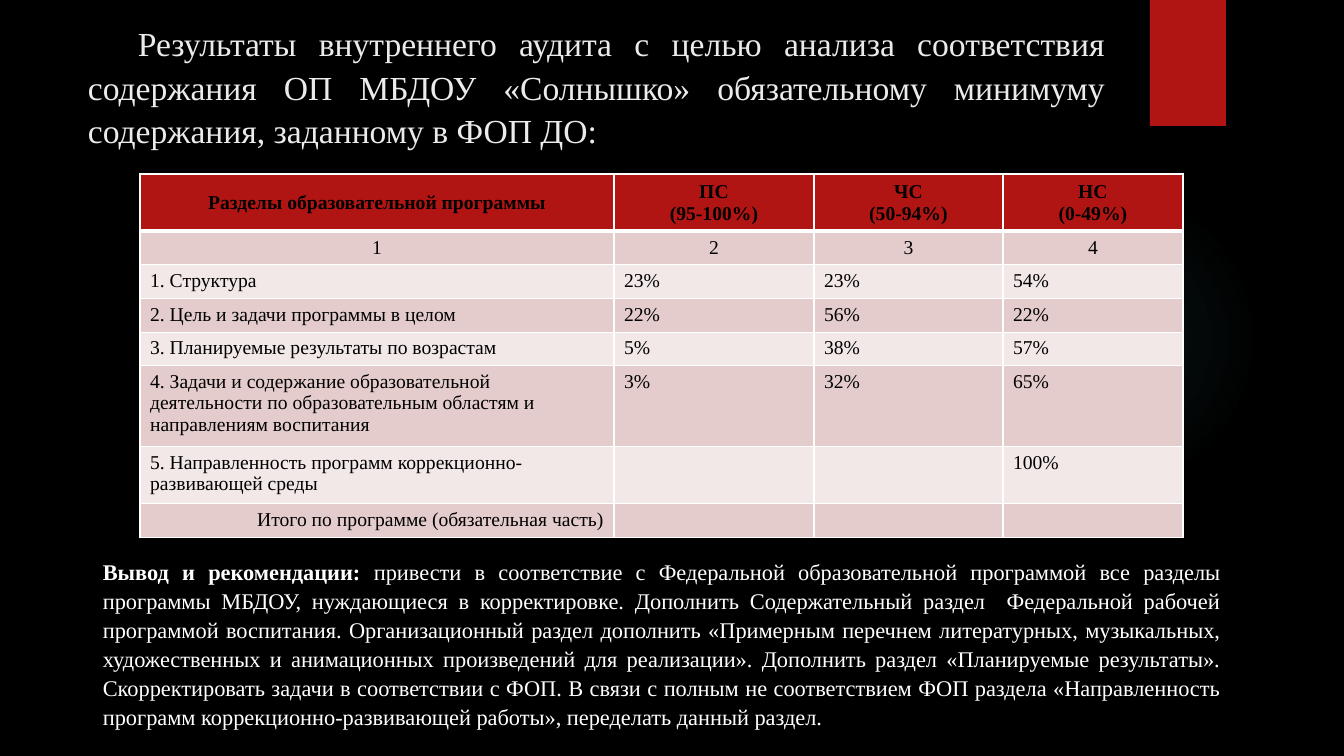
from lxml.etree import SubElement
from pptx import Presentation
from pptx.dml.color import RGBColor
from pptx.enum.shapes import MSO_SHAPE
from pptx.enum.text import MSO_ANCHOR, PP_ALIGN
from pptx.oxml import parse_xml
from pptx.oxml.ns import nsdecls, qn
from pptx.util import Pt

EMU_PER_PX = 914400 / 100.8


def px(n):
    return round(n * EMU_PER_PX)


def rgb(color):
    return RGBColor.from_string(color)


class AuditSlide:
    font = "Times New Roman"
    black, white, title_color = "000000", "FFFFFF", "EBEBEB"
    red, glow_color = "B01513", "50B9C1"
    bands = ("E4CCCC", "F2E8E7")

    def __init__(self, prs):
        self.slide = prs.slides.add_slide(prs.slide_layouts[6])
        fill = self.slide.background.fill
        fill.solid()
        fill.fore_color.rgb = rgb(self.black)

    def format_run(self, r, size, color, bold=False):
        r.font.name = self.font
        r.font.size = Pt(size)
        r.font.bold = bold
        r.font.color.rgb = rgb(color)

    def shape(self, kind, left, top, width, height, color):
        sp = self.slide.shapes.add_shape(kind, px(left), px(top), px(width), px(height))
        sp.shadow.inherit = False
        sp.fill.solid()
        sp.fill.fore_color.rgb = rgb(color)
        sp.line.fill.background()
        return sp

    def glow(self, left, top, size, stops):
        """Draw a circle fading outwards; stops are (position, opacity) in percent."""
        sp = self.shape(MSO_SHAPE.OVAL, left, top, size, size, self.glow_color)
        stop_xml = "".join(
            f'<a:gs pos="{pos * 1000}"><a:srgbClr val="{self.glow_color}">'
            f'<a:alpha val="{opacity * 1000}"/></a:srgbClr></a:gs>'
            for pos, opacity in stops)
        grad = parse_xml(
            f'<a:gradFill {nsdecls("a")} rotWithShape="1"><a:gsLst>{stop_xml}</a:gsLst>'
            '<a:path path="circle"><a:fillToRect l="50000" t="50000" r="50000" b="50000"/>'
            '</a:path></a:gradFill>')
        solid = sp.fill._xPr.find(qn("a:solidFill"))
        solid.getparent().replace(solid, grad)

    def text(self, left, top, width, height, parts, size, color, indent=0):
        """Add one justified paragraph; parts are (text, bold) pairs."""
        box = self.slide.shapes.add_textbox(px(left), px(top), px(width), px(height))
        tf = box.text_frame
        tf.word_wrap = True
        p = tf.paragraphs[0]
        p.alignment = PP_ALIGN.JUSTIFY
        p.line_spacing = 1.08
        if indent:
            p._p.get_or_add_pPr().set("indent", str(px(indent)))
        for words, bold in parts:
            r = p.add_run()
            r.text = words
            self.format_run(r, size, color, bold)

    def borders(self, cell, top, bottom):
        """Draw white cell borders; top and bottom are widths in points."""
        tc_pr = cell._tc.get_or_add_tcPr()
        widths = {"lnL": 1, "lnR": 1, "lnT": top, "lnB": bottom}
        for i, (tag, width) in enumerate(widths.items()):
            tc_pr.insert(i, parse_xml(
                f'<a:{tag} {nsdecls("a")} w="{Pt(width)}"><a:solidFill>'
                f'<a:srgbClr val="{self.white}"/></a:solidFill></a:{tag}>'))

    def cell(self, cell, words, fill, align, middle, bold, size=14):
        cell.fill.solid()
        cell.fill.fore_color.rgb = rgb(fill)
        cell.vertical_anchor = MSO_ANCHOR.MIDDLE if middle else MSO_ANCHOR.TOP
        cell.text_frame.text = words
        for p in cell.text_frame.paragraphs:
            p.alignment = align
            for r in p.runs:
                self.format_run(r, size, self.black, bold)
            if not words:
                SubElement(p._p, qn("a:endParaRPr")).set("sz", str(size * 100))

    def table(self, left, top, widths, heights, rows):
        frame = self.slide.shapes.add_table(
            len(heights), len(widths), px(left), px(top), px(sum(widths)), px(sum(heights)))
        table = frame.table
        for column, width in zip(table.columns, widths):
            column.width = px(width)
        for row, height in zip(table.rows, heights):
            row.height = px(height)
        last = len(rows) - 1
        for i, row in enumerate(rows):
            fill = self.red if i == 0 else self.bands[(i - 1) % 2]
            for j, words in enumerate(row):
                align = PP_ALIGN.LEFT
                if i < 2:
                    align = PP_ALIGN.CENTER
                elif i == last and j == 0:
                    align = PP_ALIGN.RIGHT
                cell = table.cell(i, j)
                self.cell(cell, words, fill, align, middle=i < 2, bold=i == 0)
                self.borders(cell, top=3 if i == 1 else 1, bottom=3 if i == 0 else 1)


TITLE = ("Результаты внутреннего аудита с целью анализа соответствия содержания "
         "ОП МБДОУ «Солнышко» обязательному минимуму содержания, заданному в ФОП ДО:")

AUDIT_ROWS = [
    ("Разделы образовательной программы", "ПС\n(95-100%)", "ЧС\n(50-94%)", "НС\n(0-49%)"),
    ("1", "2", "3", "4"),
    ("1. Структура", "23%", "23%", "54%"),
    ("2. Цель и задачи программы в целом", "22%", "56%", "22%"),
    ("3. Планируемые результаты по возрастам", "5%", "38%", "57%"),
    ("4. Задачи и содержание образовательной деятельности по образовательным "
     "областям и направлениям воспитания", "3%", "32%", "65%"),
    ("5. Направленность программ коррекционно-развивающей среды", "", "", "100%"),
    ("Итого по программе (обязательная часть)", "", "", ""),
]

CONCLUSION = [
    ("Вывод и рекомендации: ", True),
    ("привести в соответствие с Федеральной образовательной программой все разделы "
     "программы МБДОУ, нуждающиеся в корректировке. Дополнить Содержательный раздел  "
     "Федеральной рабочей программой воспитания. Организационный раздел дополнить "
     "«Примерным перечнем литературных, музыкальных, художественных и анимационных "
     "произведений для реализации». Дополнить раздел «Планируемые результаты». "
     "Скорректировать задачи в соответствии с ФОП. В связи с полным не соответствием "
     "ФОП раздела «Направленность программ коррекционно-развивающей работы», "
     "переделать данный раздел.", False),
]


def main():
    prs = Presentation()
    prs.slide_width, prs.slide_height = px(1344), px(756)
    s = AuditSlide(prs)
    s.glow(949, 184, 310, [(0, 7), (36, 6), (69, 0)])
    s.shape(MSO_SHAPE.RECTANGLE, 1150, 0, 76, 126, s.red)
    s.text(78, 15, 1037, 154, [(TITLE, False)], 24, s.title_color, indent=50)
    s.table(140, 174, [474, 200, 189, 180], [53, 32, 32, 32, 33, 75, 54, 33], AUDIT_ROWS)
    s.text(93, 551, 1138, 173, CONCLUSION, 16, s.white)
    prs.save("out.pptx")


if __name__ == "__main__":
    main()
